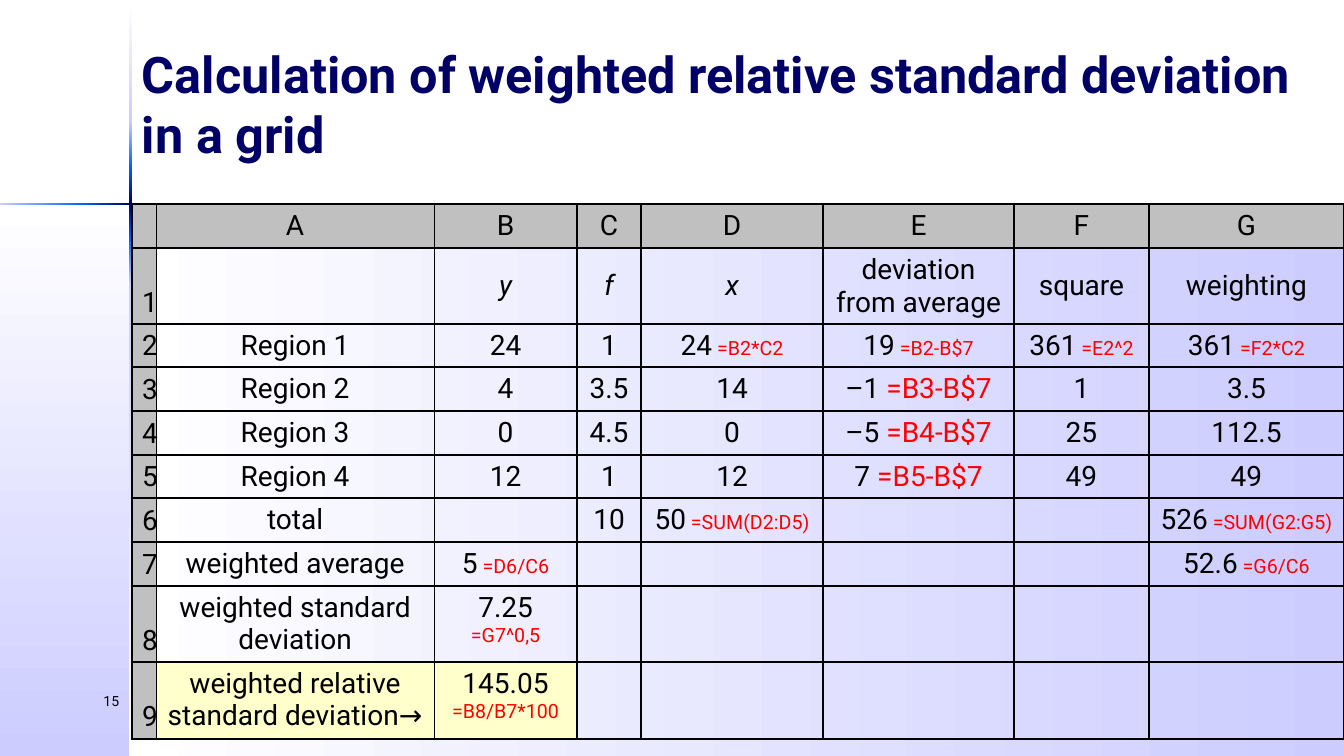
from copy import deepcopy
from dataclasses import dataclass
from itertools import pairwise

from lxml.etree import SubElement
from pptx import Presentation
from pptx.dml.color import RGBColor
from pptx.enum.shapes import MSO_SHAPE
from pptx.enum.text import MSO_ANCHOR, PP_ALIGN
from pptx.oxml.ns import qn
from pptx.slide import Slide
from pptx.table import Table, _Cell
from pptx.text.text import _Paragraph
from pptx.util import Emu, Pt

EMU_PER_PX = 914400 / 100.8
SLIDE_WIDTH, SLIDE_HEIGHT = 1344, 756
COLORS = {
    "white": "FFFFFF",
    "lavender": "CCCCFF",
    "blue": "0066FF",
    "navy": "000066",
    "black": "000000",
    "red": "FF0000",
    "gray": "C0C0C0",
    "yellow": "FFFFCC",
}

BODY_FONT = {"name": "Roboto", "size": Pt(20), "bold": False, "italic": False}
VARIABLE_FONT = BODY_FONT | {"italic": True}
SMALL_FONT = BODY_FONT | {"size": Pt(14)}
TITLE_FONT = BODY_FONT | {"size": Pt(36), "bold": True}
NUMBER_FONT = BODY_FONT | {"size": Pt(10)}
TABLE_FLAGS = {"first_row": False, "horz_banding": False}

COLUMN_WIDTHS = (24, 278, 143, 64, 182, 191, 135, 195)
ROW_HEIGHTS = (44, 76, 43, 44, 44, 43, 44, 44, 76, 77)


@dataclass
class Box:
    left: int
    top: int
    width: int
    height: int

    def emu(self) -> list[Emu]:
        return [px(value) for value in (self.left, self.top, self.width, self.height)]


@dataclass
class GradientPanel:
    box: Box
    colors: tuple[str, ...]
    vertical: bool


@dataclass
class Entry:
    value: str
    formula: str = ""
    formula_font: dict | None = None


@dataclass
class Label:
    box: Box
    text: str
    font: dict
    color: str
    frame_format: dict
    alignment: PP_ALIGN


def px(value: int) -> Emu:
    return Emu(round(value * EMU_PER_PX))


def apply_format(target: object, values: dict) -> None:
    for name, value in values.items():
        setattr(target, name, value)


def rgb(color: str) -> RGBColor:
    return RGBColor.from_string(COLORS[color])


def small(value: str, formula: str) -> Entry:
    return Entry(value, formula, SMALL_FONT)


def large(value: str, formula: str) -> Entry:
    return Entry(value, formula, BODY_FONT)


BLANK = Entry("")
SHEET = [
    [Entry("y"), Entry("f"), Entry("x"), Entry("deviation from average"), Entry("square"), Entry("weighting")],
    [Entry("24"), Entry("1"), small("24", "=B2*C2"), small("19", "=B2-B$7"), small("361", "=E2^2"), small("361", "=F2*C2")],
    [Entry("4"), Entry("3.5"), Entry("14"), large("–1", "=B3-B$7"), Entry("1"), Entry("3.5")],
    [Entry("0"), Entry("4.5"), Entry("0"), large("–5", "=B4-B$7"), Entry("25"), Entry("112.5")],
    [Entry("12"), Entry("1"), Entry("12"), large("7", "=B5-B$7"), Entry("49"), Entry("49")],
    [BLANK, Entry("10"), small("50", "=SUM(D2:D5)"), BLANK, BLANK, small("526", "=SUM(G2:G5)")],
    [small("5", "=D6/C6"), BLANK, BLANK, BLANK, BLANK, small("52.6", "=G6/C6")],
    [small("7.25", "=G7^0,5")] + [BLANK] * 5,
    [small("145.05", "=B8/B7*100")] + [BLANK] * 5,
]
ROW_LABELS = ["", "Region 1", "Region 2", "Region 3", "Region 4", "total", "weighted average",
              "weighted standard deviation", "weighted relative standard deviation→"]
HEADER = [Entry(letter) for letter in ("", *"ABCDEFG")]
ENTRIES = [HEADER] + [
    [Entry(str(number)), Entry(label), *values]
    for number, (label, values) in enumerate(zip(ROW_LABELS, SHEET), 1)
]

FADES = [("white", "lavender"), ("lavender", "blue"), ("blue", "navy", "blue"),
         ("blue", "lavender"), ("lavender", "white")]
VERTICAL_BREAKS = (1, 122, 166, 240, 284, 756)
HORIZONTAL_BREAKS = (0, 82, 179, 238, 1344)
PANELS = [
    GradientPanel(Box(130, 204, 1214, 552), ("white", "lavender"), False),
    GradientPanel(Box(0, 204, 130, 552), ("white", "lavender"), True),
    *(GradientPanel(Box(start, 203, end - start, 2), fade, False)
      for (start, end), fade in zip(pairwise(HORIZONTAL_BREAKS), FADES[1:])),
    *(GradientPanel(Box(129, start, 3, end - start), fade, True)
      for (start, end), fade in zip(pairwise(VERTICAL_BREAKS), FADES)),
]
LABELS = [
    Label(Box(0, 688, 129, 50), "15", NUMBER_FONT, "black",
          {"word_wrap": True}, PP_ALIGN.RIGHT),
    Label(Box(132, 0, 1212, 204), "Calculation of weighted relative standard deviation in a grid",
          TITLE_FONT, "navy",
          {"word_wrap": True, "vertical_anchor": MSO_ANCHOR.BOTTOM, "margin_bottom": px(40)},
          PP_ALIGN.LEFT),
]


def add_run(paragraph: _Paragraph, text: str, font: dict, color: str) -> None:
    run = paragraph.add_run()
    run.text = text
    apply_format(run.font, font)
    run.font.color.rgb = rgb(color)


def draw_panel(slide: Slide, panel: GradientPanel) -> None:
    shape = slide.shapes.add_shape(MSO_SHAPE.RECTANGLE, *panel.box.emu())
    shape.shadow.inherit = False
    shape.line.fill.background()
    shape.fill.gradient()
    shape.fill.gradient_angle = 270 if panel.vertical else 0
    stop_list = shape.element.spPr.find(qn("a:gradFill")).find(qn("a:gsLst"))
    for _ in panel.colors[2:]:
        stop_list.insert(1, deepcopy(stop_list[0]))
    for index, (stop, color) in enumerate(zip(shape.fill.gradient_stops, panel.colors)):
        stop.position = index / (len(panel.colors) - 1)
        stop.color.rgb = rgb(color)


def draw_label(slide: Slide, label: Label) -> None:
    frame = slide.shapes.add_textbox(*label.box.emu()).text_frame
    apply_format(frame, label.frame_format)
    paragraph = frame.paragraphs[0]
    paragraph.alignment = label.alignment
    add_run(paragraph, label.text, label.font, label.color)


def add_borders(cell: _Cell, row: int, column: int) -> None:
    outer_sides = {
        "L": column == 0,
        "R": column == len(COLUMN_WIDTHS) - 1,
        "T": row == 0,
        "B": row == len(ROW_HEIGHTS) - 1,
    }
    properties = cell._tc.get_or_add_tcPr()
    for side, is_outer in outer_sides.items():
        line = SubElement(properties, qn(f"a:ln{side}"), w=str(Pt(2.25 if is_outer else 1)))
        fill = SubElement(line, qn("a:solidFill"))
        SubElement(fill, qn("a:srgbClr"), val=COLORS["black"])


def fill_cell(cell: _Cell, row: int, column: int) -> None:
    if row == 0 or column == 0:
        color = "gray"
    elif row == len(ROW_HEIGHTS) - 1 and column <= 2:
        color = "yellow"
    else:
        cell.fill.background()
        return
    cell.fill.solid()
    cell.fill.fore_color.rgb = rgb(color)


def write_cell(cell: _Cell, entry: Entry, row: int, column: int) -> None:
    if column == 0:
        cell.vertical_anchor = MSO_ANCHOR.BOTTOM
    else:
        cell.vertical_anchor = MSO_ANCHOR.MIDDLE if row == 1 else MSO_ANCHOR.TOP
    paragraph = cell.text_frame.paragraphs[0]
    paragraph.alignment = PP_ALIGN.CENTER
    if entry.value:
        font = VARIABLE_FONT if row == 1 and 2 <= column <= 4 else BODY_FONT
        add_run(paragraph, entry.value, font, "black")
    if entry.formula:
        add_run(paragraph, f" {entry.formula}", entry.formula_font, "red")


def draw_sheet(slide: Slide) -> None:
    box = Box(132, 204, sum(COLUMN_WIDTHS), sum(ROW_HEIGHTS))
    table: Table = slide.shapes.add_table(len(ROW_HEIGHTS), len(COLUMN_WIDTHS), *box.emu()).table
    apply_format(table, TABLE_FLAGS)
    for column, width in zip(table.columns, COLUMN_WIDTHS):
        column.width = px(width)
    for row_index, (row, height) in enumerate(zip(table.rows, ROW_HEIGHTS)):
        row.height = px(height)
        for column_index, cell in enumerate(row.cells):
            add_borders(cell, row_index, column_index)
            fill_cell(cell, row_index, column_index)
            write_cell(cell, ENTRIES[row_index][column_index], row_index, column_index)


def main() -> None:
    presentation = Presentation()
    apply_format(presentation, {"slide_width": px(SLIDE_WIDTH), "slide_height": px(SLIDE_HEIGHT)})
    slide = presentation.slides.add_slide(presentation.slide_layouts[6])
    for panel in PANELS:
        draw_panel(slide, panel)
    draw_sheet(slide)
    for label in LABELS:
        draw_label(slide, label)
    presentation.save("out.pptx")


if __name__ == "__main__":
    main()
